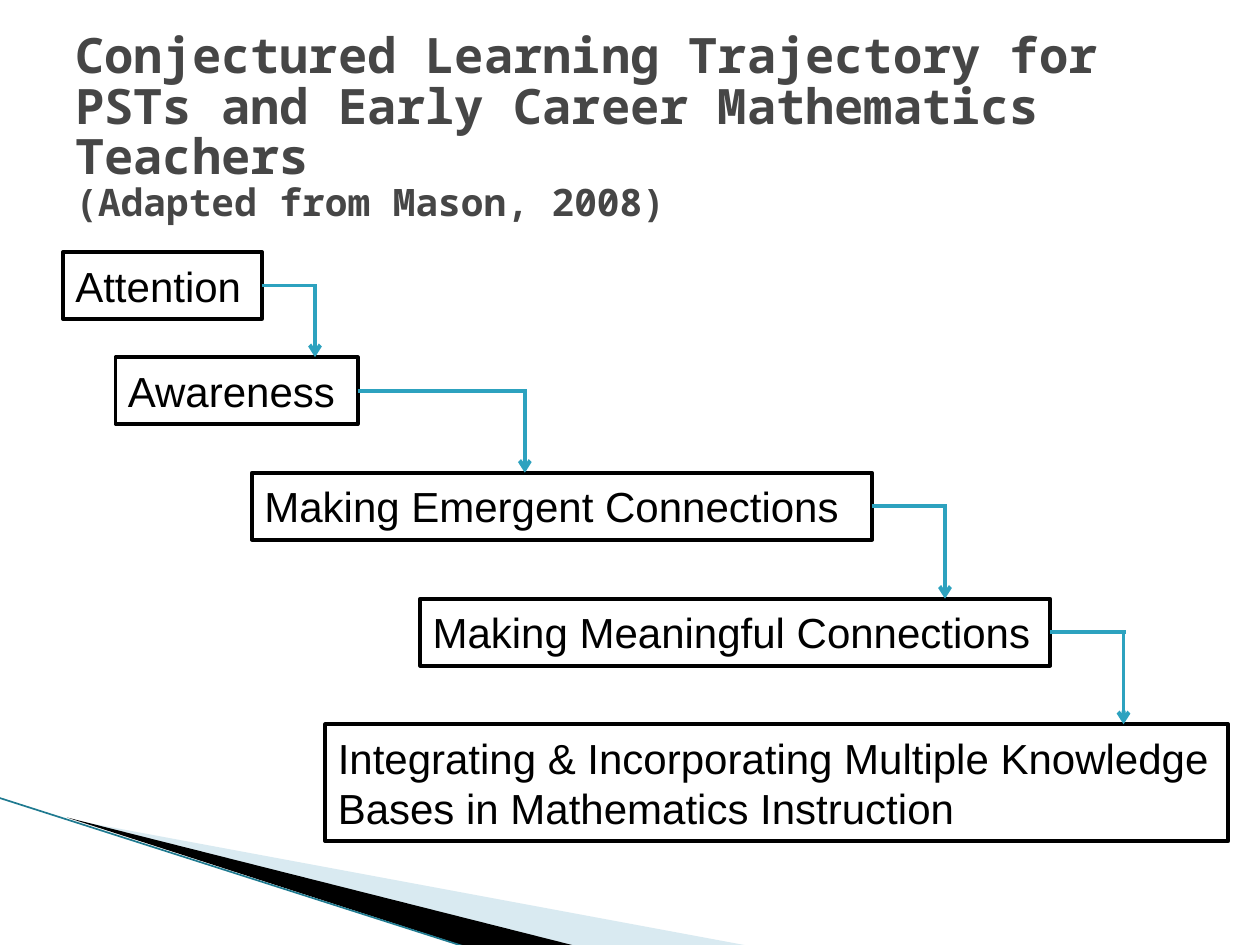
from itertools import pairwise

from lxml.etree import SubElement
from pptx import Presentation
from pptx.dml.color import RGBColor
from pptx.enum.shapes import MSO_CONNECTOR, MSO_SHAPE
from pptx.enum.text import MSO_ANCHOR, PP_ALIGN
from pptx.oxml.ns import qn
from pptx.util import Cm, Pt

COLORS = {
    "text": "464646",
    "black": "000000",
    "arrow": "2DA2BF",
    "pale": "A0CBDC",
    "edge": "1F7A90",
}


def color(name):
    return RGBColor.from_string(COLORS[name])


def write(para, text, font="Arial", size=24, ink="black", bold=False):
    run = para.add_run()
    run.text = text
    run.font.name = font
    run.font.size = Pt(size)
    run.font.bold = bold
    run.font.color.rgb = color(ink)


class Deck:
    weight = 2.25
    mono = {"font": "Noto Sans Mono", "ink": "text", "bold": True}

    def __init__(self, wide, high):
        self.prs = Presentation()
        self.prs.slide_width, self.prs.slide_height = Cm(wide), Cm(high)
        self.slide = self.prs.slides.add_slide(self.prs.slide_layouts[6])
        self.shapes = self.slide.shapes

    def wedge(self, points, fill, alpha=None):
        start, *rest = [(Cm(x), Cm(y)) for x, y in points]
        form = self.shapes.build_freeform(*start)
        form.add_line_segments(rest, close=True)
        shape = form.convert_to_shape()
        shape.shadow.inherit = False
        shape.line.fill.background()
        shape.fill.solid()
        shape.fill.fore_color.rgb = color(fill)
        if alpha:
            tint = shape.fill._xPr.find(".//" + qn("a:srgbClr"))
            SubElement(tint, qn("a:alpha"), val=str(alpha * 1000))

    def line(self, x1, y1, x2, y2, ink="arrow", weight=weight, head=False):
        link = self.shapes.add_connector(
            MSO_CONNECTOR.STRAIGHT, Cm(x1), Cm(y1), Cm(x2), Cm(y2))
        link.line.color.rgb = color(ink)
        link.line.width = Pt(weight)
        if head:
            SubElement(link.line._get_or_add_ln(), qn("a:tailEnd"), type="arrow")
        SubElement(link._element.spPr, qn("a:effectLst"))

    def title(self, x, y, w, h, main, note):
        frame = self.shapes.add_textbox(Cm(x), Cm(y), Cm(w), Cm(h)).text_frame
        frame.word_wrap = True
        frame.vertical_anchor = MSO_ANCHOR.MIDDLE
        para = frame.paragraphs[0]
        para.line_spacing = 0.87
        write(para, main, size=27.9, **self.mono)
        para.add_line_break()
        write(para, note, size=21.6, **self.mono)

    def box(self, text, x, y, w, h):
        shape = self.shapes.add_shape(
            MSO_SHAPE.RECTANGLE, Cm(x), Cm(y), Cm(w), Cm(h))
        shape.shadow.inherit = False
        shape.fill.background()
        shape.line.color.rgb = color("black")
        shape.line.width = Pt(self.weight)
        para = shape.text_frame.paragraphs[0]
        para.alignment = PP_ALIGN.LEFT
        write(para, text)


def main():
    deck = Deck(25.4, 19.05)

    # Corner decoration
    deck.wedge([(1.4, 16.52), (15.11, 19.07), (11.58, 19.07)], "pale", alpha=40)
    deck.wedge([(1.35, 16.48), (11.61, 19.07), (9.45, 19.1)], "black")
    deck.line(-0.03, 16.08, 9.42, 19.1, ink="edge", weight=0.95)

    # Heading
    deck.title(
        1.27, 0.71, 22.86, 3.76,
        "Conjectured Learning Trajectory for PSTs and Early Career "
        "Mathematics Teachers",
        "(Adapted from Mason, 2008)")

    # Stages: text, left, top, width, height
    row = 1.35
    steps = [
        ("Attention", 1.27, 5.08, 4.01, row),
        ("Awareness", 2.33, 7.2, 4.88, row),
        ("Making Emergent Connections", 5.08, 9.53, 12.5, row),
        ("Making Meaningful Connections", 8.47, 12.07, 12.7, row),
        ("Integrating & Incorporating Multiple Knowledge Bases in "
         "Mathematics Instruction", 6.56, 14.6, 18.2, 2.36),
    ]
    for step in steps:
        deck.box(*step)

    # Elbow arrows: out of one stage, then down to the next
    turns = [6.35, 10.58, 19.05, 22.65]
    for (step, after), turn in zip(pairwise(steps), turns):
        _, x, y, w, h = step
        mid = y + h / 2
        deck.line(x + w, mid, turn + 0.04, mid)
        deck.line(turn, mid, turn, after[2], head=True)

    deck.prs.save("out.pptx")


if __name__ == "__main__":
    main()
